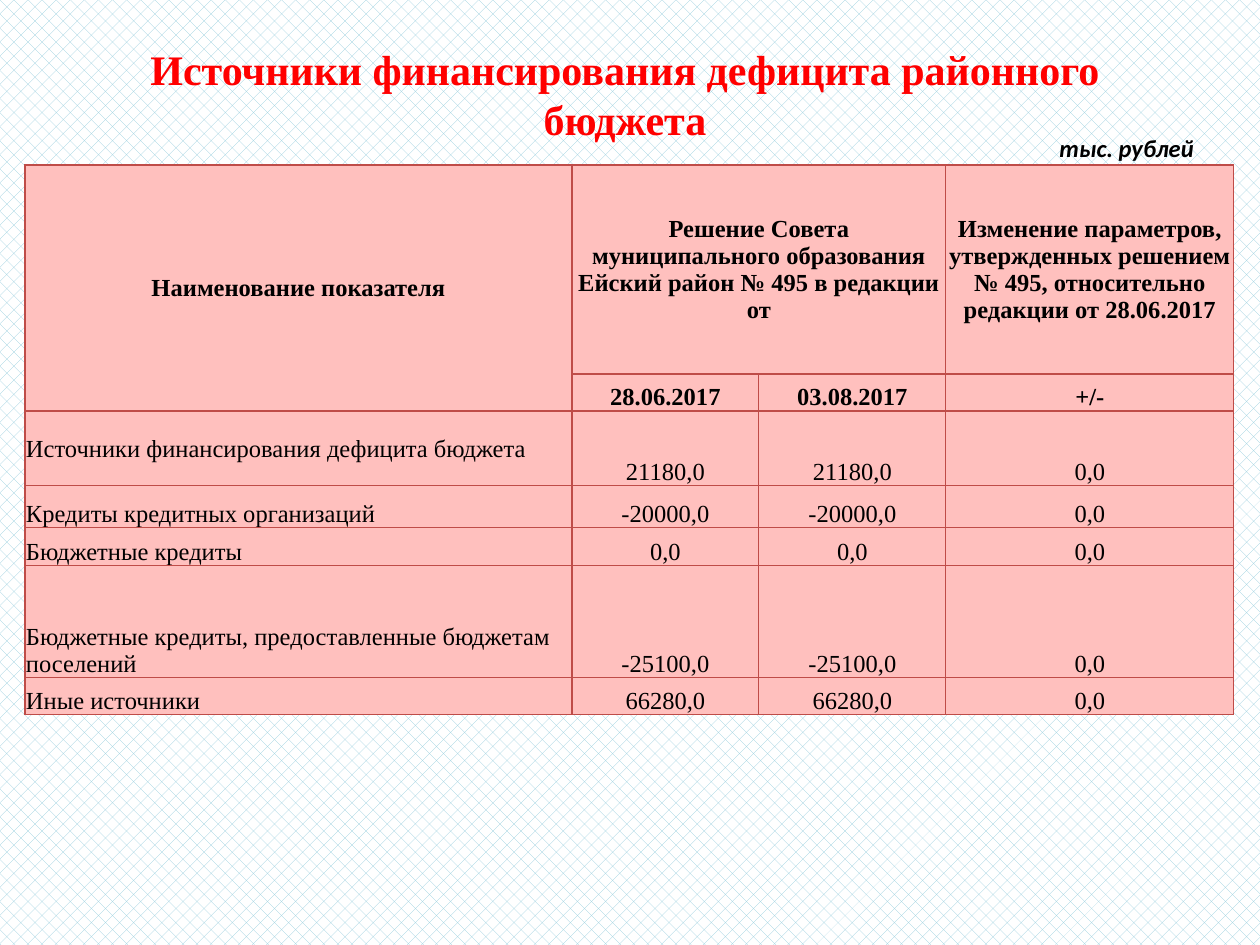
from lxml.etree import SubElement
from pptx import Presentation
from pptx.dml.color import RGBColor
from pptx.enum.dml import MSO_PATTERN
from pptx.enum.text import MSO_ANCHOR, MSO_AUTO_SIZE, PP_ALIGN
from pptx.oxml.ns import qn
from pptx.util import Emu, Inches, Pt

TITLE = "Источники финансирования дефицита районного бюджета"
UNIT = "тыс. рублей"
HEAD = [
    ("Наименование показателя", "Решение Совета муниципального образования "
     "Ейский район № 495 в редакции от", "",
     "Изменение параметров, утвержденных решением № 495, "
     "относительно редакции от 28.06.2017"),
    ("", "28.06.2017", "03.08.2017", "+/-"),
]
BODY = [
    ("Источники финансирования дефицита бюджета", "21180,0", "21180,0", "0,0"),
    ("Кредиты кредитных организаций", "-20000,0", "-20000,0", "0,0"),
    ("Бюджетные кредиты", "0,0", "0,0", "0,0"),
    ("Бюджетные кредиты, предоставленные бюджетам поселений",
     "-25100,0", "-25100,0", "0,0"),
    ("Иные источники", "66280,0", "66280,0", "0,0"),
]
COLS = [547, 187, 187, 288]
ROWS = [209, 37, 75, 42, 38, 112, 37]
MERGES = [((0, 0), (1, 0)), ((0, 1), (0, 2))]
MIDDLE = {(0, 0), (0, 1), (0, 3), (2, 0)}
SERIF = "Times New Roman"
FILL, LINE = "FFC0BE", "BF4C48"


def px(n):
    return Emu(round(n * 914400 / 126))


def rgb(code):
    return RGBColor.from_string(code)


def style(par, size, color="000000", name=SERIF, bold=False, italic=False):
    font = par.font
    font.name, font.size, font.bold, font.italic = name, Pt(size), bold, italic
    font.color.rgb = rgb(color)


def border(cell):
    props = cell._tc.get_or_add_tcPr()
    for i, side in enumerate(("lnL", "lnR", "lnT", "lnB")):
        line = props.makeelement(qn("a:" + side), {"w": str(Pt(0.75))})
        props.insert(i, line)
        fill = SubElement(line, qn("a:solidFill"))
        SubElement(fill, qn("a:srgbClr"), val=LINE)


def place(shape, left, top, width, height):
    shape.left, shape.top = px(left), px(top)
    shape.width, shape.height = px(width), px(height)


deck = Presentation()
deck.slide_width, deck.slide_height = Inches(10), Inches(7.5)
slide = deck.slides.add_slide(deck.slide_layouts[5])

back = slide.background.fill
back.patterned()
back.pattern = MSO_PATTERN.PERCENT_25
back.fore_color.rgb, back.back_color.rgb = rgb("93CDDD"), rgb("FFFFFF")

title = slide.shapes.title
place(title, 54, 37, 1142, 115)
frame = title.text_frame
frame.text = TITLE
frame.word_wrap = True
frame.auto_size = MSO_AUTO_SIZE.SHAPE_TO_FIT_TEXT
frame.vertical_anchor = MSO_ANCHOR.TOP
frame.paragraphs[0].alignment = PP_ALIGN.CENTER
style(frame.paragraphs[0], 24, "FF0000", bold=True)

unit = slide.shapes.add_textbox(px(1047), px(127), px(189), px(43))
frame = unit.text_frame
frame.text = UNIT
frame.word_wrap = True
frame.auto_size = MSO_AUTO_SIZE.SHAPE_TO_FIT_TEXT
style(frame.paragraphs[0], 14, name="Calibri", bold=True, italic=True)

table = slide.shapes.add_table(
    len(ROWS), len(COLS), px(25), px(165), px(sum(COLS)), px(sum(ROWS))).table
for col, width in zip(table.columns, COLS):
    col.width = px(width)
for row, height in zip(table.rows, ROWS):
    row.height = px(height)

for r, texts in enumerate(HEAD + BODY):
    head = r < len(HEAD)
    for c, text in enumerate(texts):
        cell = table.cell(r, c)
        cell.text = text
        cell.margin_left = cell.margin_right = cell.margin_top = px(1)
        cell.margin_bottom = 0
        cell.vertical_anchor = (
            MSO_ANCHOR.MIDDLE if (r, c) in MIDDLE else MSO_ANCHOR.BOTTOM)
        cell.fill.solid()
        cell.fill.fore_color.rgb = rgb(FILL)
        border(cell)
        par = cell.text_frame.paragraphs[0]
        par.alignment = PP_ALIGN.CENTER if head or c else PP_ALIGN.LEFT
        style(par, 14, bold=head)

for first, last in MERGES:
    table.cell(*first).merge(table.cell(*last))

deck.save("out.pptx")
